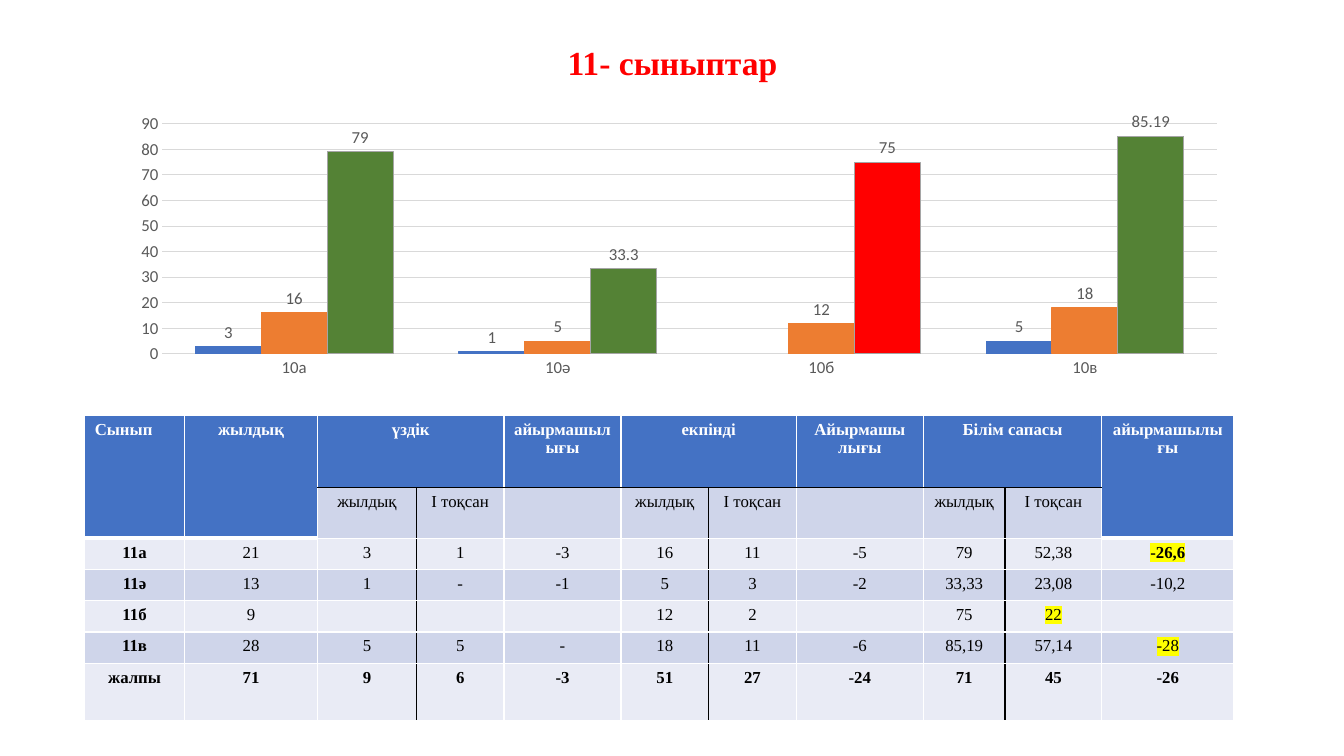
import pptx
import pptx.chart.data
import pptx.dml.color
import pptx.enum.chart
import pptx.enum.text
import pptx.oxml
import pptx.oxml.ns
import pptx.util
from lxml import etree

Inches, Pt, qn = pptx.util.Inches, pptx.util.Pt, pptx.oxml.ns.qn
CENTER = pptx.enum.text.PP_ALIGN.CENTER
SERIF = "Times New Roman"
WHITE, BLACK, YELLOW, GREY = "FFFFFF", "000000", "FFFF00", "595959"
HEADER_BLUE, BAND_DARK, BAND_LIGHT = "4472C4", "CFD5EA", "E9EBF5"


def color(hex_value):
    return pptx.dml.color.RGBColor.from_string(hex_value)


def write(text_frame, text, size=12, hex_value=BLACK, bold=False, align=CENTER,
          highlight=None, line_spacing=None):
    """Fill a text frame, one paragraph for each line of text."""
    for index, line in enumerate(text.split("\n")):
        paragraph = text_frame.add_paragraph() if index else text_frame.paragraphs[0]
        paragraph.alignment = align
        paragraph.line_spacing = line_spacing
        if not line:
            etree.SubElement(paragraph._p, qn("a:endParaRPr"), sz=str(size * 100))
            continue
        run = paragraph.add_run()
        run.text = line
        run.font.size, run.font.bold, run.font.name = Pt(size), bold, SERIF
        run.font.color.rgb = color(hex_value)
        if highlight:
            mark = etree.Element(qn("a:highlight"))
            etree.SubElement(mark, qn("a:srgbClr"), val=highlight)
            run._r.rPr.find(qn("a:latin")).addprevious(mark)


presentation = pptx.Presentation()
presentation.slide_width, presentation.slide_height = Inches(13.33), Inches(7.5)
slide = presentation.slides.add_slide(presentation.slide_layouts[6])

# Title
title = slide.shapes.add_textbox(Inches(0.92), Inches(0.4), Inches(11.5), Inches(0.48))
title.text_frame.word_wrap = True
title.text_frame.vertical_anchor = pptx.enum.text.MSO_ANCHOR.MIDDLE
write(title.text_frame, "11- сыныптар", size=24, hex_value="FF0000", bold=True,
      line_spacing=0.9)

# Table
header = ["Сынып", "жылдық", "үздік", "", "айырмашылығы", "екпінді", "",
          "Айырмашы\nлығы", "Білім сапасы", "", "айырмашылығы"]
subheader = ["", "", "жылдық", "І тоқсан", "", "жылдық", "І тоқсан", "",
             "жылдық", "І тоқсан", ""]
results = [
    ["11а", "21", "3", "1", "-3", "16", "11", "-5", "79", "52,38", "-26,6"],
    ["11ә", "13", "1", "-", "-1", "5", "3", "-2", "33,33", "23,08", "-10,2"],
    ["11б", "9", "", "", "", "12", "2", "", "75", "22", ""],
    ["11в", "28", "5", "5", "-", "18", "11", "-6", "85,19", "57,14", "-28"],
    ["жалпы", "71", "9", "6", "-3", "51", "27", "-24", "71", "45", "-26"],
]
rows = [header, subheader] + results
column_widths = [0.99, 1.32, 0.98, 0.87, 1.16, 0.87, 0.87, 1.26, 0.81, 0.96, 1.31]
row_heights = [0.72, 0.47, 0.31, 0.31, 0.31, 0.31, 0.57]
tall_columns = (0, 1, 10)
pair_columns = (2, 5, 8)
highlighted = {(2, 10), (4, 9), (5, 10)}
last_row = len(rows) - 1

table = slide.shapes.add_table(len(rows), len(column_widths), Inches(0.84), Inches(4.12),
                               Inches(11.4), Inches(3)).table
for column, width in zip(table.columns, column_widths):
    column.width = Inches(width)
for row, height in zip(table.rows, row_heights):
    row.height = Inches(height)

for r, texts in enumerate(rows):
    for c, text in enumerate(texts):
        cell = table.cell(r, c)
        is_header = r == 0 or (r == 1 and c in tall_columns)
        bold = is_header or r == last_row or (c == 0 and r > 1) or (r, c) == (2, 10)
        write(cell.text_frame, text, hex_value=WHITE if is_header else BLACK, bold=bold,
              align=None if (r, c) == (0, 0) else CENTER,
              highlight=YELLOW if (r, c) in highlighted else None)

        borders = {side: (WHITE, 1) for side in ("lnL", "lnR", "lnT", "lnB")}
        if is_header and c in tall_columns:
            borders["lnB"] = (WHITE, 3)
        elif r < 2:
            borders["lnT" if r else "lnB"] = (BLACK, 1)
        if r and c in pair_columns:
            borders["lnR"] = (BLACK, 1)
        if r and c - 1 in pair_columns:
            borders["lnL"] = (BLACK, 1)
        properties = cell._tc.get_or_add_tcPr()
        for side, (hex_value, points) in borders.items():
            line = etree.SubElement(properties, qn("a:" + side), w=str(Pt(points)))
            fill = etree.SubElement(line, qn("a:solidFill"))
            etree.SubElement(fill, qn("a:srgbClr"), val=hex_value)

        cell.fill.solid()
        band = BAND_DARK if r % 2 else BAND_LIGHT
        cell.fill.fore_color.rgb = color(HEADER_BLUE if is_header else band)

for c in tall_columns:
    table.cell(0, c).merge(table.cell(1, c))
for c in pair_columns:
    table.cell(0, c).merge(table.cell(0, c + 1))

# Chart
chart_data = pptx.chart.data.CategoryChartData()
chart_data.categories = ["10а", "10ә", "10б", "10в"]
chart_data.add_series("Series 1", [3, 1, None, 5])
chart_data.add_series("Series 2", [16, 5, 12, 18])
chart_data.add_series("Series 3", [79, 33.3, 75, 85.19])
chart = slide.shapes.add_chart(pptx.enum.chart.XL_CHART_TYPE.COLUMN_CLUSTERED, Inches(0.59),
                               Inches(0.88), Inches(12.16), Inches(2.88), chart_data).chart
chart.has_title = False
chart.has_legend = False
chart.font.size, chart.font.name = Pt(12), "Calibri"
chart.font.color.rgb = color(GREY)

plot = chart.plots[0]
plot.gap_width, plot.overlap, plot.vary_by_categories = 100, 0, False
plot.has_data_labels = True
plot.data_labels.show_value = True
plot.data_labels.position = pptx.enum.chart.XL_LABEL_POSITION.OUTSIDE_END
plot.data_labels.font.size, plot.data_labels.font.name = Pt(12), "Calibri"
plot.data_labels.font.color.rgb = color(GREY)

series_colors = [("4472C4", "4472C4"), ("ED7D31", "ED7D31"), ("548235", "A5A5A5")]
for series, (fill_color, line_color) in zip(plot.series, series_colors):
    series.invert_if_negative = False
    series.format.fill.solid()
    series.format.fill.fore_color.rgb = color(fill_color)
    series.format.line.color.rgb = color(line_color)
    series.format.line.width = Pt(0.75)
red_bar = plot.series[2].points[2].format
red_bar.fill.solid()
red_bar.fill.fore_color.rgb = color("FF0000")
red_bar.line.color.rgb = color("A5A5A5")
red_bar.line.width = Pt(0.75)

value_axis, category_axis = chart.value_axis, chart.category_axis
value_axis.minimum_scale, value_axis.maximum_scale, value_axis.major_unit = 0, 90, 10
value_axis.format.line.fill.background()
for axis in (value_axis, category_axis):
    axis.major_tick_mark = pptx.enum.chart.XL_TICK_MARK.NONE
for line in (value_axis.major_gridlines.format.line, category_axis.format.line):
    line.color.rgb = color("D9D9D9")
    line.width = Pt(0.75)

plot_area = chart._chartSpace.chart.plotArea
for old_layout in plot_area.findall(qn("c:layout")):
    plot_area.remove(old_layout)
layout = etree.Element(qn("c:layout"))
manual = etree.SubElement(layout, qn("c:manualLayout"))
for tag, value in (("layoutTarget", "inner"), ("xMode", "edge"), ("yMode", "edge"),
                   ("x", "0.084"), ("y", "0.121"), ("w", "0.86"), ("h", "0.793")):
    etree.SubElement(manual, qn("c:" + tag), val=value)
plot_area.insert(0, layout)

presentation.save("out.pptx")
